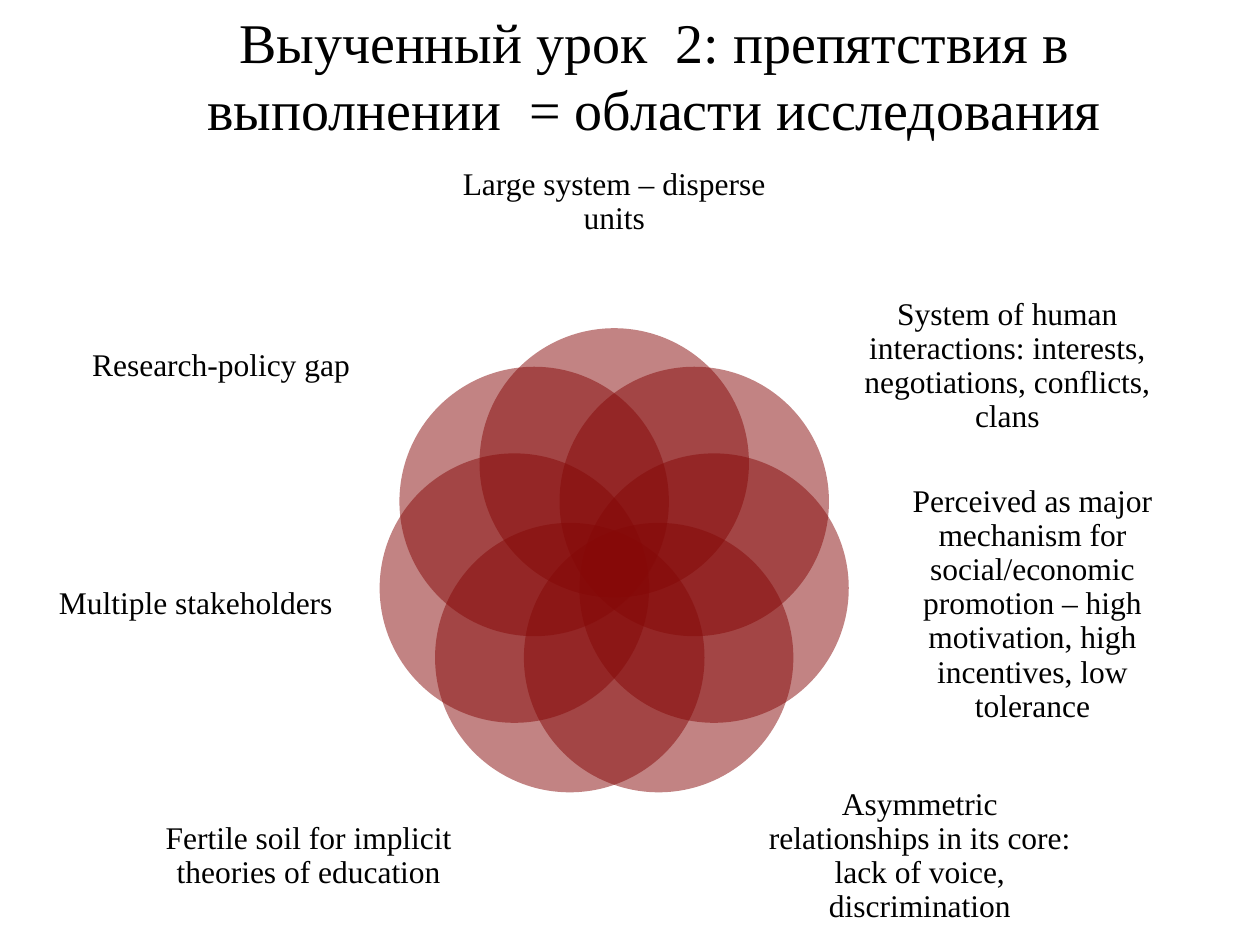
from math import cos, pi, sin

from lxml.etree import SubElement
from pptx import Presentation
from pptx.dml.color import RGBColor as RGB
from pptx.enum.shapes import MSO_SHAPE as Shape
from pptx.enum.text import MSO_ANCHOR as Anchor, PP_ALIGN as Align
from pptx.oxml.ns import qn
from pptx.util import Inches, Pt

BLACK = RGB(0, 0, 0)
WINE = RGB(0x86, 0x09, 0x08)
FONT = "Times New Roman"
COLS, ROWS = 100, 75  # slide grid

# Petal labels, clockwise from the top:
# text, shift from the middle axis, centre row, width, height in cells
LABELS = [
    ("Large system – disperse units", 0, 16.05, 24.5, 13.1),
    ("System of human interactions: interests, negotiations, conflicts, clans",
     31.2, 29.1, 23.2, 14.4),
    ("Perceived as major mechanism for social/economic promotion – "
     "high motivation, high incentives, low tolerance",
     33.2, 48, 22.7, 15.4),
    ("Asymmetric relationships in its core: lack of voice, discrimination",
     24.25, 67.95, 24.5, 14.1),
    ("Fertile soil for implicit theories of education",
     -24.25, 67.95, 24.5, 14.1),
    ("Multiple stakeholders", -33.2, 48, 22.7, 15.4),
    ("Research-policy gap", -31.2, 29.1, 23.2, 14.4),
]

prs = Presentation()
prs.slide_width, prs.slide_height = Inches(10), Inches(7.5)
COL, ROW = prs.slide_width / COLS, prs.slide_height / ROWS


def cells(x, y, w, h):
    """Turn a box in grid cells into slide lengths."""
    return int(x * COL), int(y * ROW), int(w * COL), int(h * ROW)


def around(x, y, w, h):
    """Box of the given size centred on a point."""
    return x - w / 2, y - h / 2, w, h


def write(shapes, box, text, size, inset=0, lead=None):
    """Centred text in a box."""
    frame = shapes.add_textbox(*cells(*box)).text_frame
    frame.word_wrap = True
    frame.vertical_anchor = Anchor.MIDDLE
    frame.margin_left = frame.margin_right = Inches(inset)
    frame.margin_top = frame.margin_bottom = Inches(inset / 2)
    para = frame.paragraphs[0]
    para.alignment = Align.CENTER
    if lead:
        para.line_spacing = lead
    run = para.add_run()
    run.text = text
    run.font.name, run.font.size = FONT, Pt(size)
    run.font.color.rgb = BLACK


def petal(shapes, box):
    """Half-transparent circle without an outline."""
    disc = shapes.add_shape(Shape.OVAL, *cells(*box))
    disc.shadow.inherit = False
    disc.fill.solid()
    disc.fill.fore_color.rgb = WINE
    disc.line.fill.background()
    tint = disc.fill._xPr.find(".//" + qn("a:srgbClr"))
    SubElement(tint, qn("a:alpha"), val="50000")


def title(slide, box):
    write(slide.shapes, box,
          "Выученный урок  2: препятствия в выполнении  = области исследования",
          32, inset=0.1)


def flower(slide, box):
    """Ring of overlapping circles, each with a label outside."""
    left, top, wide, high = box
    mid_x, mid_y = left + wide / 2, top + 0.54 * high
    size = 0.24 * wide
    orbit = 0.38 * size
    group = slide.shapes.add_group_shape().shapes
    for i, (text, shift, row, w, h) in enumerate(LABELS):
        turn = 2 * pi * i / len(LABELS)
        x, y = mid_x + orbit * sin(turn), mid_y - orbit * cos(turn)
        petal(group, around(x, y, size, size))
        write(group, around(mid_x + shift, row, w, h), text, 18, lead=0.9)


def main():
    slide = prs.slides.add_slide(prs.slide_layouts[6])
    title(slide, (12.5, 0, 78.9, 11.8))
    flower(slide, (4.2, 9.5, 89.1, 65.5))
    prs.save("out.pptx")


if __name__ == "__main__":
    main()
